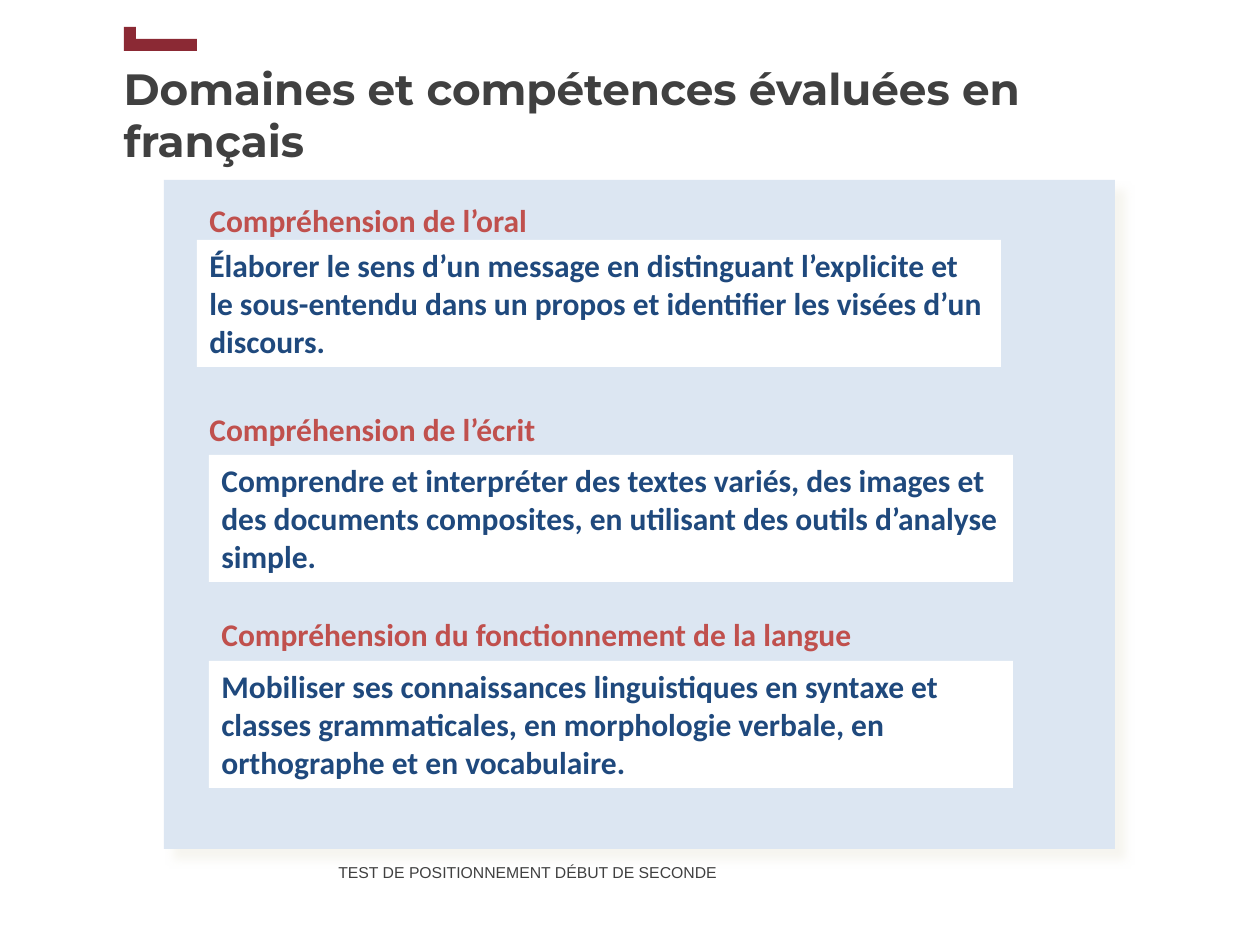
"""Build the slide on the skills assessed in French."""
from dataclasses import dataclass

from lxml import etree
from pptx import Presentation
from pptx.dml.color import RGBColor
from pptx.enum import shapes, text
from pptx.oxml.ns import qn
from pptx.util import Emu, Pt

PX = 914400 / 126
GREY, MAROON, PANEL, SHADOW = "404040", "8B2934", "DCE6F2", "EEECE1"
RED, NAVY, WHITE = "C0504D", "1F497D", "FFFFFF"


@dataclass(frozen=True)
class Box:
    """A rectangle in px."""
    left: int
    top: int
    width: int
    height: int

    def emu(self) -> tuple:
        """Return left, top, width and height in EMU."""
        return tuple(px(v) for v in (self.left, self.top, self.width, self.height))


@dataclass(frozen=True)
class Domain:
    """A heading with its white skill card."""
    heading: str
    heading_box: Box
    skill: str
    left: int
    top: int


DOMAINS = (
    Domain("Compréhension de l’oral", Box(197, 195, 793, 51),
           "Élaborer le sens d’un message en distinguant l’explicite et le "
           "sous-entendu dans un propos et identifier les visées d’un discours.",
           197, 240),
    Domain("Compréhension de l’écrit", Box(197, 404, 428, 51),
           "Comprendre et interpréter des textes variés, des images et des "
           "documents composites, en utilisant des outils d’analyse simple.",
           209, 455),
    Domain("Compréhension du fonctionnement de la langue", Box(209, 609, 662, 51),
           "Mobiliser ses connaissances linguistiques en syntaxe et classes "
           "grammaticales, en morphologie verbale, en orthographe et en vocabulaire.",
           209, 661),
)


def px(value: int) -> Emu:
    """Convert px to EMU."""
    return Emu(round(value * PX))


def color(value: str) -> RGBColor:
    """Convert a hex string to a colour."""
    return RGBColor.from_string(value)


def write(shape, content: str, *, size: int = 18, font: str = "Calibri",
          fill: str = NAVY, bold: bool = True, anchor=text.MSO_ANCHOR.TOP) -> None:
    """Write one left-aligned, formatted paragraph into a shape."""
    frame = shape.text_frame
    frame.word_wrap = True
    frame.auto_size = text.MSO_AUTO_SIZE.NONE
    frame.vertical_anchor = anchor
    paragraph = frame.paragraphs[0]
    paragraph.alignment = text.PP_ALIGN.LEFT
    run = paragraph.add_run()
    run.text = content
    run.font.size, run.font.name, run.font.bold = Pt(size), font, bold
    run.font.color.rgb = color(fill)


def add_rectangle(parent, box: Box, fill: str):
    """Add a plain filled rectangle."""
    shape = parent.add_shape(shapes.MSO_SHAPE.RECTANGLE, *box.emu())
    shape.shadow.inherit = False
    shape.fill.solid()
    shape.fill.fore_color.rgb = color(fill)
    shape.line.fill.background()
    return shape


def add_shadow(shape) -> None:
    """Give a shape a soft diagonal shadow."""
    effects = shape._element.spPr.find(qn("a:effectLst"))
    shadow = etree.SubElement(effects, qn("a:outerShdw"), blurRad=str(Pt(5)),
                              dist=str(Pt(8.5)), dir="2700000", algn="tl",
                              rotWithShape="0")
    tint = etree.SubElement(shadow, qn("a:srgbClr"), val=SHADOW)
    etree.SubElement(tint, qn("a:alpha"), val="50000")


def add_domain(slide, domain: Domain) -> None:
    """Add a domain heading and its skill card."""
    heading = slide.shapes.add_textbox(*domain.heading_box.emu())
    write(heading, domain.heading, fill=RED)
    card = add_rectangle(slide.shapes, Box(domain.left, domain.top, 804, 127), WHITE)
    write(card, domain.skill)


def main() -> None:
    """Build and save the presentation."""
    presentation = Presentation()
    presentation.slide_width, presentation.slide_height = px(1260), px(945)
    slide = presentation.slides.add_slide(presentation.slide_layouts[5])

    title = slide.shapes.title
    title.left, title.top, title.width, title.height = Box(111, 25, 1086, 178).emu()
    write(title, "Domaines et compétences évaluées en français", size=25,
          font="Montserrat", fill=GREY, anchor=text.MSO_ANCHOR.MIDDLE)

    corner = slide.shapes.add_group_shape()
    for box in (Box(124, 27, 12, 24), Box(130, 39, 67, 12)):
        add_rectangle(corner.shapes, box, MAROON)

    add_shadow(add_rectangle(slide.shapes, Box(164, 180, 951, 669), PANEL))
    for domain in DOMAINS:
        add_domain(slide, domain)

    footer = slide.shapes.add_textbox(*Box(326, 847, 489, 51).emu())
    write(footer, "TEST DE POSITIONNEMENT DÉBUT DE SECONDE", size=9, font="Arial",
          fill=GREY, bold=False, anchor=text.MSO_ANCHOR.MIDDLE)
    presentation.save("out.pptx")


if __name__ == "__main__":
    main()
